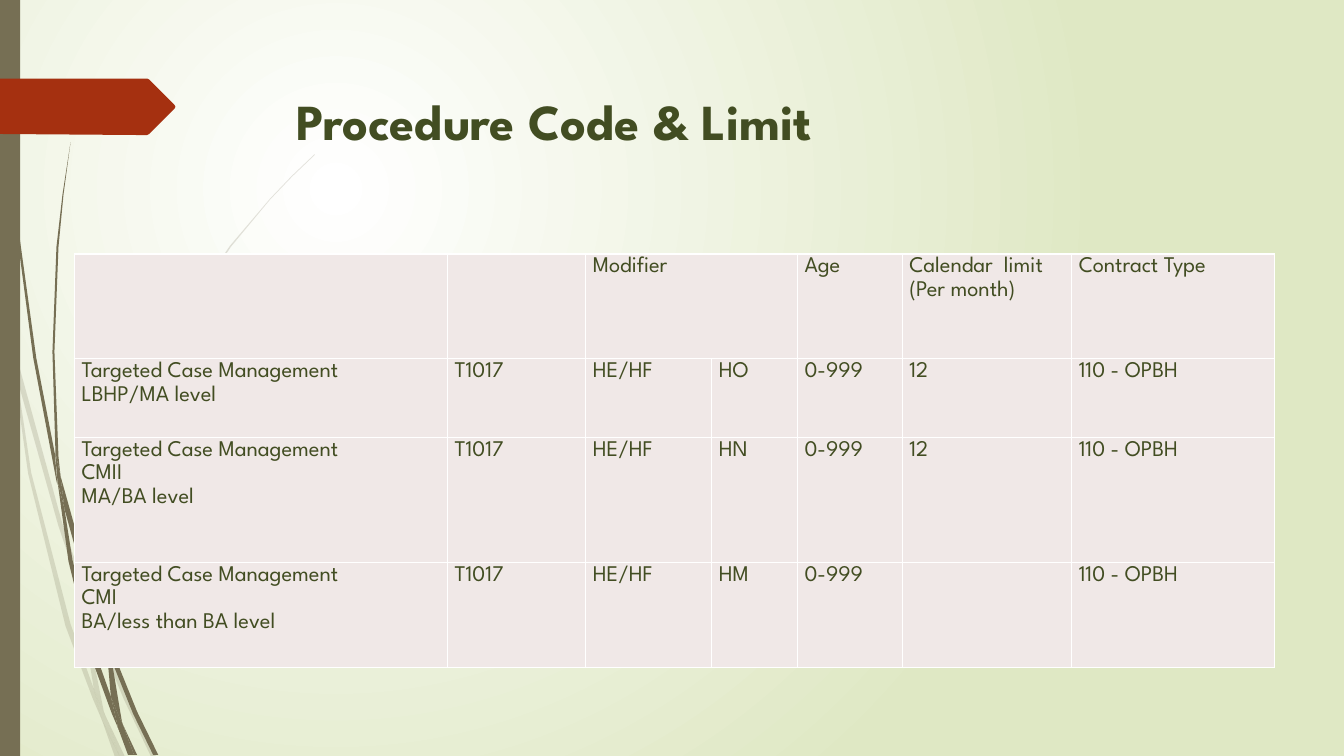
from dataclasses import dataclass

from lxml import etree
from pptx import Presentation
from pptx.dml.color import RGBColor
from pptx.enum.shapes import MSO_SHAPE
from pptx.enum.text import MSO_ANCHOR
from pptx.oxml.ns import qn
from pptx.util import Emu, Pt

RECT = MSO_SHAPE.RECTANGLE
TOP = MSO_ANCHOR.TOP
SCALE = 9144


@dataclass(frozen=True)
class Theme:
    font: str = "League Spartan"
    ink: str = "424D22"
    stem: str = "766F54"
    flag: str = "A53010"
    cell: str = "F0E8E7"
    edge: str = "FFFFFF"
    glow: str = "FFFFFF"
    base: str = "DFE8C4"
    title: int = 36
    body: int = 16


THEME = Theme()

PALE = [
    [(11, 350), (9, 322), (0, 282), (0, 299), (10, 344)],
    [(58, 522), (84, 599), (85, 586), (62, 520), (14, 345), (17, 376)],
    [(92, 607), (88, 596), (88, 610), (123, 694), (150, 751), (155, 751),
     (127, 692)],
    [(119, 751), (124, 751), (105, 711)],
    [(93, 683), (70, 619), (31, 469), (17, 376), (11, 350), (28, 470),
     (65, 621), (92, 693), (101, 714), (99, 707)],
    [(84, 599), (87, 646), (93, 683), (96, 692), (105, 711), (103, 706),
     (91, 646), (88, 610), (88, 608)],
    [(88, 584), (110, 462), (160, 349), (229, 245), (268, 198), (290, 175),
     (312, 154), (312, 153), (289, 175), (268, 197), (228, 244), (158, 348),
     (107, 461), (85, 584), (85, 586), (88, 596)],
    [(101, 714), (114, 751), (119, 751)],
    [(88, 608), (88, 610), (88, 596), (85, 586), (84, 599)],
    [(96, 692), (93, 683), (99, 707), (101, 714), (119, 751), (105, 711)],
]

DARK = [
    [(7, 110), (17, 233), (33, 355), (56, 477), (57, 481), (55, 457),
     (55, 453), (36, 355), (19, 232), (8, 109), (5, 48), (4, 0), (3, 0),
     (4, 48)],
    [(88, 592), (106, 645), (106, 631), (93, 590), (60, 472), (64, 505)],
    [(113, 649), (110, 641), (111, 656), (132, 708), (152, 749), (157, 749),
     (136, 706)],
    [(110, 691), (98, 657), (72, 556), (64, 505), (57, 477), (68, 557),
     (93, 659), (111, 708), (117, 722), (116, 717)],
    [(60, 472), (58, 453), (54, 349), (58, 245), (63, 193), (70, 141),
     (62, 193), (56, 245), (52, 349), (55, 449)],
    [(133, 749), (136, 749), (122, 719)],
    [(57, 477), (64, 505), (60, 472), (55, 449), (55, 453)],
    [(111, 633), (125, 552), (158, 476), (205, 406), (231, 374), (245, 359),
     (261, 344), (260, 344), (245, 358), (231, 373), (204, 405), (156, 474),
     (122, 551), (106, 631), (110, 641)],
    [(117, 722), (127, 749), (131, 749)],
    [(106, 645), (110, 691), (116, 706), (122, 719), (121, 716), (111, 656),
     (109, 651)],
    [(106, 645), (109, 651), (111, 656), (110, 641), (106, 631)],
    [(116, 706), (110, 691), (116, 717), (117, 722), (130, 749), (133, 749),
     (122, 719)],
]

FLAG = [(173, 108), (148, 133), (146, 134), (136, 134), (0, 133), (0, 78),
        (146, 78), (148, 79), (173, 104), (174, 106)]

COLS = [370, 137, 125, 85, 104, 168, 201]
ROWS = [104, 78, 124, 104]
CASE = "Targeted Case Management\n"
CELLS = [
    ["", "", "Modifier", "", "Age", "Calendar  limit (Per month)",
     "Contract Type"],
] + [
    [CASE + level, "T1017", "HE/HF", code, "0-999", limit, "110 - OPBH"]
    for level, code, limit in [
        ("LBHP/MA level", "HO", "12"),
        ("CMII\nMA/BA level", "HN", "12"),
        ("CMI\nBA/less than BA level", "HM", ""),
    ]
]


def px(size):
    return Emu(size * SCALE)


def rgb(name):
    return RGBColor.from_string(name)


def paint(shape, color, alpha=100):
    shape.shadow.inherit = False
    shape.fill.solid()
    shape.fill.fore_color.rgb = rgb(color)
    shape.line.fill.background()
    if alpha < 100:
        tone = shape.fill._xPr.find(".//" + qn("a:srgbClr"))
        etree.SubElement(tone, qn("a:alpha"), val=str(alpha * 1000))


def draw(shapes, points, color, alpha=100):
    pen = shapes.build_freeform(*points[0], scale=SCALE)
    pen.add_line_segments(points[1:], close=True)
    paint(pen.convert_to_shape(), color, alpha)


def add_wisp(slide, blades, alpha):
    group = slide.shapes.add_group_shape()
    for blade in blades:
        draw(group.shapes, blade, THEME.stem, alpha)


def add_glow(slide):
    fill = slide.background.fill
    fill.gradient()
    for stop, color in zip(fill.gradient_stops, (THEME.glow, THEME.base)):
        stop.color.rgb = rgb(color)
    grad = slide._element.find(".//" + qn("a:gradFill"))
    grad.remove(grad.find(qn("a:lin")))
    ring = etree.SubElement(grad, qn("a:path"), {"path": "circle"})
    etree.SubElement(ring, qn("a:fillToRect"),
                     l="50000", t="50000", r="100000", b="100000")


def style(par, size, bold=False):
    font = par.font
    font.name, font.size, font.bold = THEME.font, Pt(size), bold
    font.color.rgb = rgb(THEME.ink)


def add_title(slide, text):
    box = slide.shapes.add_textbox(px(284), px(68), px(975), px(140))
    frame = box.text_frame
    frame.word_wrap = True
    frame.vertical_anchor = TOP
    frame.margin_top = px(21)
    frame.text = text
    style(frame.paragraphs[0], THEME.title, True)


def edge(cell):
    props = cell._tc.get_or_add_tcPr()
    for side in ("lnL", "lnR", "lnT", "lnB"):
        line = etree.SubElement(props, qn("a:" + side), w=str(Pt(1)))
        solid = etree.SubElement(line, qn("a:solidFill"))
        etree.SubElement(solid, qn("a:srgbClr"), val=THEME.edge)


def fill_cell(cell, text):
    edge(cell)
    cell.fill.solid()
    cell.fill.fore_color.rgb = rgb(THEME.cell)
    cell.margin_left = cell.margin_right = px(7)
    cell.margin_top = cell.margin_bottom = 0
    cell.text = text
    for par in cell.text_frame.paragraphs:
        par.line_spacing = 1.15
        style(par, THEME.body)


def add_grid(slide):
    frame = slide.shapes.add_table(len(ROWS), len(COLS), px(74), px(252),
                                   px(sum(COLS)), px(sum(ROWS)))
    table = frame.table
    table.first_row = table.horz_banding = False
    for col, width in zip(table.columns, COLS):
        col.width = px(width)
    for row, height, texts in zip(table.rows, ROWS, CELLS):
        row.height = px(height)
        for cell, text in zip(row.cells, texts):
            fill_cell(cell, text)
    table.cell(0, 2).merge(table.cell(0, 3))


def main():
    deck = Presentation()
    deck.slide_width, deck.slide_height = px(1333), px(750)
    slide = deck.slides.add_slide(deck.slide_layouts[6])
    add_glow(slide)
    add_wisp(slide, PALE, 20)
    add_wisp(slide, DARK, 100)
    bar = slide.shapes.add_shape(RECT, 0, 0, px(20), px(750))
    paint(bar, THEME.stem)
    draw(slide.shapes, FLAG, THEME.flag)
    add_title(slide, "Procedure Code & Limit")
    add_grid(slide)
    deck.save("out.pptx")


if __name__ == "__main__":
    main()
